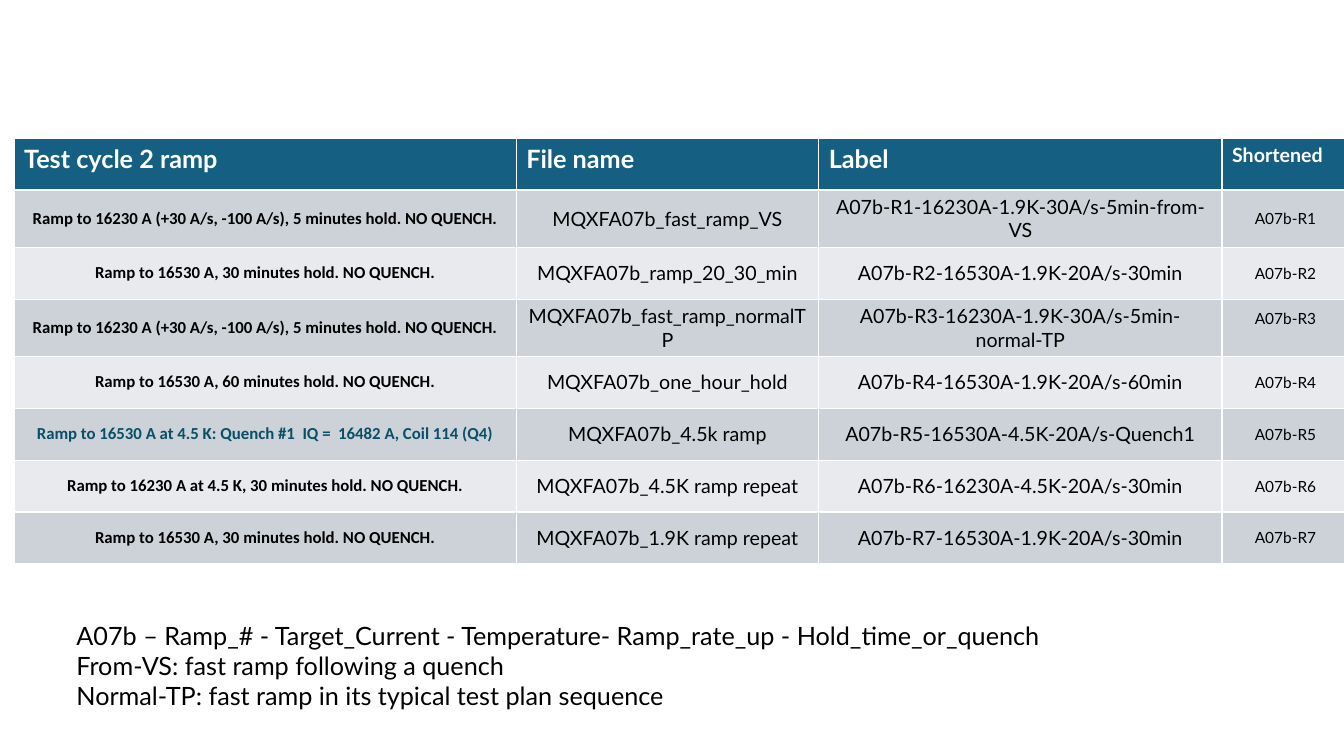
from pptx import Presentation
from pptx.dml.color import RGBColor
from pptx.enum.text import MSO_ANCHOR, PP_ALIGN
from pptx.util import Inches, Pt

LEFT, CENTER = PP_ALIGN.LEFT, PP_ALIGN.CENTER
TOP, MIDDLE = MSO_ANCHOR.TOP, MSO_ANCHOR.MIDDLE

COLORS = {
    "header": "156082",
    "odd": "CCD2D8",
    "even": "E8EAED",
    "white": "FFFFFF",
    "black": "000000",
    "quench": "084F6A",
}
COL_WIDTHS = [4.98, 3, 4, 1.26]
HEADERS = ["Test cycle 2 ramp", "File name", "Label", "Shortened"]
HEADER_SIZES = [18, 18, 18, 14]
BODY_SIZES = [12, 14, 14, 11]
RAMPS = [
    ("Ramp to 16230 A (+30 A/s, -100 A/s), 5 minutes hold. NO QUENCH.",
     "MQXFA07b_fast_ramp_VS", "16230A-1.9K-30A/s-5min-from-VS"),
    ("Ramp to 16530 A, 30 minutes hold. NO QUENCH.",
     "MQXFA07b_ramp_20_30_min", "16530A-1.9K-20A/s-30min"),
    ("Ramp to 16230 A (+30 A/s, -100 A/s), 5 minutes hold. NO QUENCH.",
     "MQXFA07b_fast_ramp_normalTP", "16230A-1.9K-30A/s-5min-normal-TP"),
    ("Ramp to 16530 A, 60 minutes hold. NO QUENCH.",
     "MQXFA07b_one_hour_hold", "16530A-1.9K-20A/s-60min"),
    ("Ramp to 16530 A at 4.5 K: Quench #1  IQ =  16482 A, Coil 114 (Q4)",
     "MQXFA07b_4.5k ramp", "16530A-4.5K-20A/s-Quench1"),
    ("Ramp to 16230 A at 4.5 K, 30 minutes hold. NO QUENCH.",
     "MQXFA07b_4.5K ramp repeat", "16230A-4.5K-20A/s-30min"),
    ("Ramp to 16530 A, 30 minutes hold. NO QUENCH.",
     "MQXFA07b_1.9K ramp repeat", "16530A-1.9K-20A/s-30min"),
]
NOTES = [
    "A07b – Ramp_# - Target_Current - Temperature- Ramp_rate_up - Hold_time_or_quench",
    "From-VS: fast ramp following a quench",
    "Normal-TP: fast ramp in its typical test plan sequence",
]


def rgb(name):
    return RGBColor.from_string(COLORS[name])


def write(p, text, size=18, font="Lato", color="black", bold=False, align=LEFT):
    p.alignment = align
    r = p.add_run()
    r.text = text
    r.font.size = Pt(size)
    r.font.name = font
    r.font.bold = bold
    r.font.color.rgb = rgb(color)


def fill_cell(cell, text, fill, anchor=MIDDLE, **fmt):
    cell.fill.solid()
    cell.fill.fore_color.rgb = rgb(fill)
    cell.vertical_anchor = anchor
    write(cell.text_frame.paragraphs[0], text, **fmt)


def add_ramp_table(slide, left, top, width, height):
    table = slide.shapes.add_table(
        len(RAMPS) + 1, len(HEADERS),
        Inches(left), Inches(top), Inches(width), Inches(height)).table
    for col, col_width in zip(table.columns, COL_WIDTHS):
        col.width = Inches(col_width)
    for c, (text, size) in enumerate(zip(HEADERS, HEADER_SIZES)):
        fill_cell(table.cell(0, c), text, "header", anchor=TOP,
                  size=size, color="white", bold=True)
    for n, (ramp, file_name, label) in enumerate(RAMPS, 1):
        short = f"A07b-R{n}"
        row = [ramp, file_name, f"{short}-{label}", short]
        for c, (text, size) in enumerate(zip(row, BODY_SIZES)):
            first = c == 0
            fill_cell(table.cell(n, c), text, "odd" if n % 2 else "even",
                      size=size, bold=first, align=CENTER,
                      font="Calibri" if first else "Lato",
                      color="quench" if first and "Quench #" in text else "black")
    table.cell(3, 3).margin_bottom = Inches(0.23)


def add_notes(slide, left, top, width, height):
    sp = slide.shapes.add_textbox(
        Inches(left), Inches(top), Inches(width), Inches(height))
    tf = sp.text_frame
    tf.word_wrap = True
    for i, text in enumerate(NOTES):
        write(tf.add_paragraph() if i else tf.paragraphs[0], text)


def main():
    prs = Presentation()
    prs.slide_width, prs.slide_height = Inches(13.33), Inches(7.5)
    slide = prs.slides.add_slide(prs.slide_layouts.get_by_name("Blank"))
    add_ramp_table(slide, 0.14, 1.37, sum(COL_WIDTHS), 4.12)
    add_notes(slide, 0.66, 6.1, 11.65, 1.01)
    prs.save("out.pptx")


if __name__ == "__main__":
    main()
